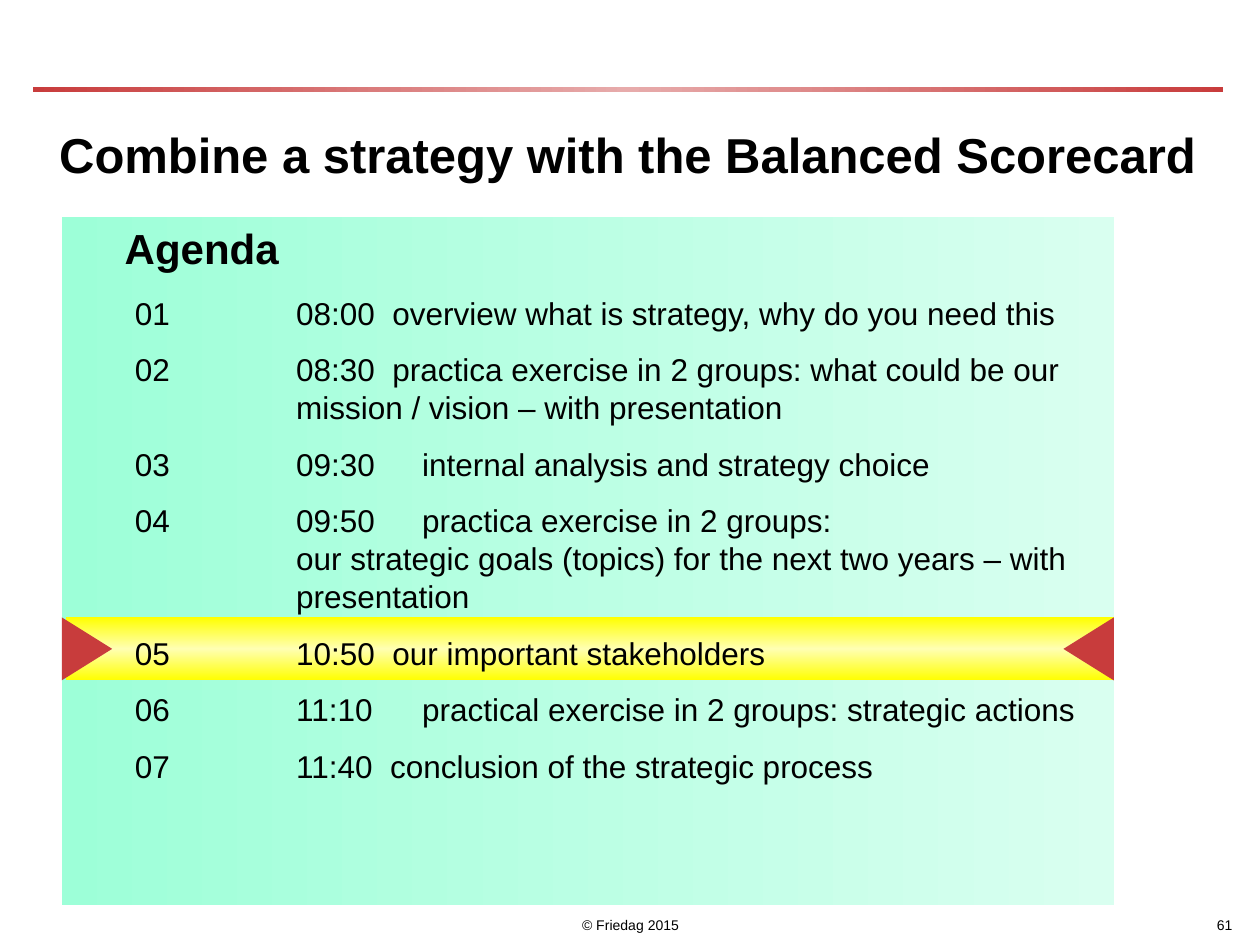
from copy import deepcopy
from lxml import etree
from pptx import Presentation
from pptx.dml.color import RGBColor
from pptx.enum import shapes, text
from pptx.oxml.ns import qn
from pptx.util import Inches, Pt

BLACK = RGBColor(0, 0, 0)
RED = RGBColor(0xC8, 0x3C, 0x3C)
PINK = RGBColor(0xE7, 0xAB, 0xAB)
MINT = RGBColor(0x9D, 0xFF, 0xD8)
PALE = RGBColor(0xD9, 0xFF, 0xF0)
YELLOW = RGBColor(0xFF, 0xFF, 0)
CREAM = RGBColor(0xFF, 0xFF, 0xB2)
SHAPE = shapes.MSO_SHAPE
ALIGN = text.PP_ALIGN
ANCHOR = text.MSO_ANCHOR

AGENDA = [
    "01\t08:00  overview what is strategy, why do you need this",
    "02\t08:30  practica exercise in 2 groups: what could be our "
    "mission / vision – with presentation",
    "03\t09:30 \tinternal analysis and strategy choice",
    "04\t09:50 \tpractica exercise in 2 groups:\v"
    "our strategic goals (topics) for the next two years – with presentation",
    "05\t10:50  our important stakeholders",
    "06\t11:10  \tpractical exercise in 2 groups: strategic actions",
    "07\t11:40  conclusion of the strategic process",
]


def add_shape(slide, kind, box, colors, angle=0, turn=0):
    shape = slide.shapes.add_shape(kind, *map(Inches, box))
    shape.shadow.inherit = False
    shape.line.fill.background()
    shape.rotation = turn
    if len(colors) == 1:
        shape.fill.solid()
        shape.fill.fore_color.rgb = colors[0]
        return
    shape.fill.gradient()
    shape.fill.gradient_angle = angle
    stops = next(shape._element.iter(qn("a:gsLst")))
    for _ in colors[2:]:
        stops.append(deepcopy(stops[0]))
    for i, (stop, color) in enumerate(zip(shape.fill.gradient_stops, colors)):
        stop.position = i / (len(colors) - 1)
        stop.color.rgb = color


def hang(para, indent, tab):
    props = para._p.get_or_add_pPr()
    props.set("marL", str(Inches(indent)))
    props.set("indent", str(-Inches(indent)))
    tabs = etree.SubElement(props, qn("a:tabLst"))
    etree.SubElement(tabs, qn("a:tab"), pos=str(Inches(tab)), algn="l")


def add_text(slide, lines, box, size, bold=False, align=ALIGN.LEFT,
             anchor=ANCHOR.TOP, inset=(0.04, 0.05, 0.04, 0.05),
             after=0, indent=0, tab=0):
    frame = slide.shapes.add_textbox(*map(Inches, box)).text_frame
    frame.word_wrap = True
    frame.vertical_anchor = anchor
    (frame.margin_left, frame.margin_top,
     frame.margin_right, frame.margin_bottom) = map(Inches, inset)
    for i, line in enumerate(lines):
        para = frame.add_paragraph() if i else frame.paragraphs[0]
        para.text = line
        para.alignment = align
        para.space_after = Pt(after)
        if indent:
            hang(para, indent, tab)
        for run in para.runs:
            run.font.name = "Arial"
            run.font.size = Pt(size)
            run.font.bold = bold
            run.font.color.rgb = BLACK


def add_foot(slide, words, box, align):
    add_text(slide, [words], box, 8, align=align, anchor=ANCHOR.BOTTOM,
             inset=(0.1, 0, 0.1, 0.04))


def main():
    deck = Presentation()
    deck.slide_width, deck.slide_height = Inches(10), Inches(7.5)
    slide = deck.slides.add_slide(deck.slide_layouts[6])

    add_shape(slide, SHAPE.RECTANGLE, (0.26, 0.69, 9.45, 0.04), [RED, PINK, RED])
    add_shape(slide, SHAPE.RECTANGLE, (0.49, 1.72, 8.35, 5.46), [MINT, PALE])
    add_text(slide, ["Combine a strategy with the Balanced Scorecard"],
             (0.43, 0.94, 9.14, 1.07), 28, bold=True)
    add_text(slide, ["Agenda"], (0.95, 1.72, 9.14, 0.55), 24, bold=True)

    add_shape(slide, SHAPE.RECTANGLE, (0.52, 4.9, 8.32, 0.5),
              [YELLOW, CREAM, YELLOW], angle=90)
    for left, turn in ((0.44, 90), (8.39, 270)):
        add_shape(slide, SHAPE.ISOSCELES_TRIANGLE, (left, 4.95, 0.5, 0.4),
                  [RED], turn=turn)
    add_text(slide, AGENDA, (1.03, 1.88, 7.81, 4.33), 18, after=10.8,
             inset=(0.04, 0.45, 0.04, 0.05), indent=1.28, tab=0.99)

    add_foot(slide, "© Friedag 2015", (3.42, 7.06, 3.17, 0.39), ALIGN.CENTER)
    add_foot(slide, "61", (7.8, 7.06, 2.08, 0.39), ALIGN.RIGHT)
    deck.save("out.pptx")


if __name__ == "__main__":
    main()
